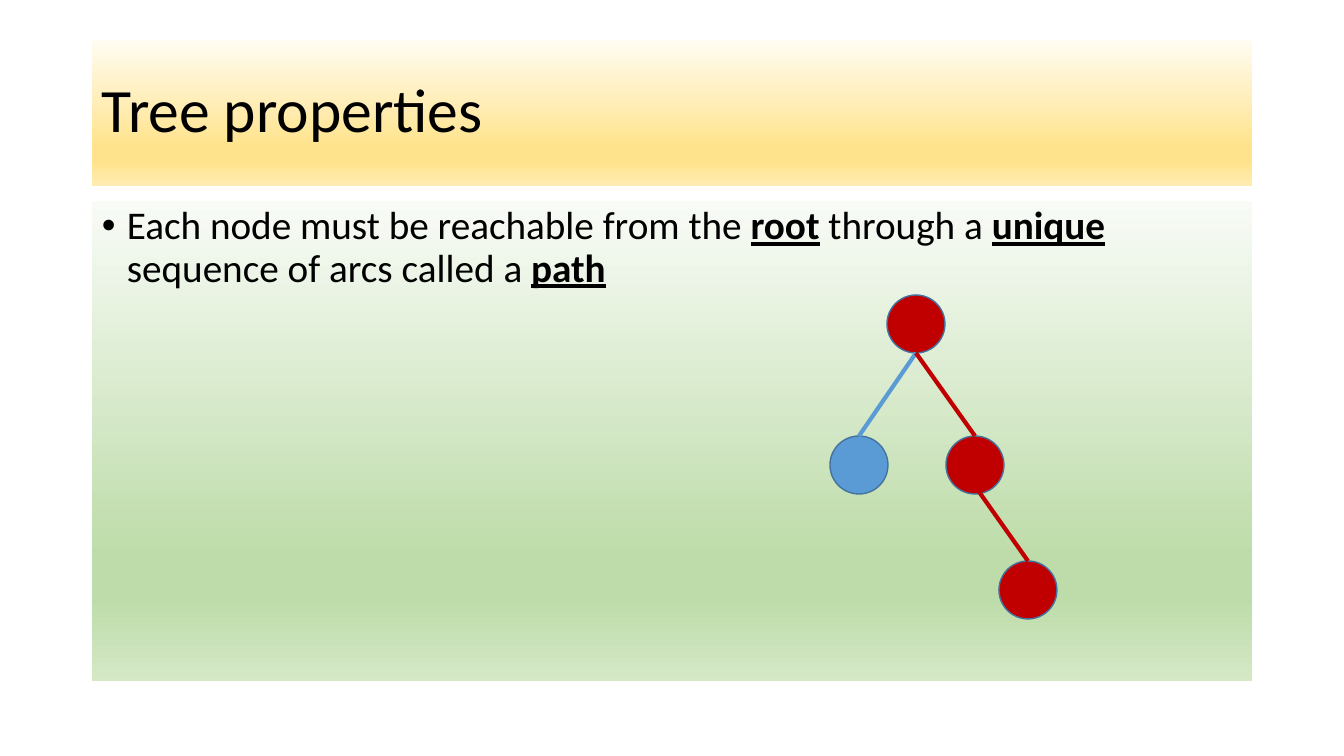
import pptx
import pptx.util
import pptx.dml.color
import pptx.enum.shapes
import pptx.enum.text
import pptx.oxml
import pptx.oxml.ns
import lxml.etree

RGB = pptx.dml.color.RGBColor
SHAPES = pptx.enum.shapes.MSO_SHAPE
ANCHOR = pptx.enum.text.MSO_ANCHOR
ALIGN = pptx.enum.text.PP_ALIGN
qn = pptx.oxml.ns.qn

BLACK = RGB(0x00, 0x00, 0x00)
RED = RGB(0xC0, 0x00, 0x00)
BLUE = RGB(0x5B, 0x9B, 0xD5)
OUTLINE = RGB(0x43, 0x73, 0x9E)
YELLOWS = [RGB(0xFF, 0xFC, 0xF2), RGB(0xFF, 0xE3, 0x8C),
           RGB(0xFF, 0xE3, 0x8C), RGB(0xFF, 0xEC, 0xB2)]
GREENS = [RGB(0xF8, 0xFB, 0xF6), RGB(0xBE, 0xDC, 0xAA),
          RGB(0xBE, 0xDC, 0xAA), RGB(0xD4, 0xE8, 0xC6)]
STOPS = [0, 74, 83, 100]  # percent

# Content: runs are (text, emphasised)
TITLE = [("Tree properties", False)]
STATEMENT = [
    ("Each node must be reachable from the ", False), ("root", True),
    (" through a ", False), ("unique", True),
    (" sequence of arcs called a ", False), ("path", True),
]
# Node: left, top, colour
NODES = {
    "root": (887, 295, RED),
    "left": (830, 436, BLUE),
    "right": (946, 436, RED),
    "leaf": (999, 561, RED),
}
# Arc: start point, child node, colour
ARCS = [
    ((916, 353), "left", BLUE),
    ((916, 353), "right", RED),
    ((970, 479), "leaf", RED),
]

# Layout in px
SLIDE_W, SLIDE_H = 1344, 756
PANEL_LEFT, PANEL_W = 92, 1160
TITLE_TOP, TITLE_H = 40, 146
BODY_TOP, BODY_H = 201, 480
NODE_SIZE = 58
BULLET_INDENT = 25


def px(length):
    return pptx.util.Emu(round(length * 12192000 / SLIDE_W))


def add_panel(top, height, colors, runs, size, anchor):
    panel = slide.shapes.add_shape(SHAPES.RECTANGLE, px(PANEL_LEFT), px(top),
                                   px(PANEL_W), px(height))
    panel.shadow.inherit = False
    panel.line.fill.background()

    # Vertical gradient with four stops
    panel.fill.gradient()
    panel.fill.gradient_angle = 270
    stop_list = next(panel.element.iter(qn("a:gsLst")))
    for stop in list(stop_list):
        stop_list.remove(stop)
    for percent, color in zip(STOPS, colors):
        stop = lxml.etree.SubElement(stop_list, qn("a:gs"), pos=str(percent * 1000))
        lxml.etree.SubElement(stop, qn("a:srgbClr"), val=str(color))

    frame = panel.text_frame
    frame.word_wrap = True
    frame.vertical_anchor = anchor
    paragraph = frame.paragraphs[0]
    paragraph.alignment = ALIGN.LEFT
    paragraph.line_spacing = 0.9
    for text, emphasised in runs:
        run = paragraph.add_run()
        run.text = text
        run.font.name = "Calibri"
        run.font.size = pptx.util.Pt(size)
        run.font.color.rgb = BLACK
        run.font.bold = run.font.underline = emphasised
    return paragraph


presentation = pptx.Presentation()
presentation.slide_width = px(SLIDE_W)
presentation.slide_height = px(SLIDE_H)
slide = presentation.slides.add_slide(presentation.slide_layouts[6])

# Title and bulleted statement
add_panel(TITLE_TOP, TITLE_H, YELLOWS, TITLE, 44, ANCHOR.MIDDLE)
statement = add_panel(BODY_TOP, BODY_H, GREENS, STATEMENT, 28, ANCHOR.TOP)
statement.space_before = pptx.util.Pt(10)
bullet_props = statement._p.get_or_add_pPr()
bullet_props.set("marL", str(px(BULLET_INDENT)))
bullet_props.set("indent", str(-px(BULLET_INDENT)))
lxml.etree.SubElement(bullet_props, qn("a:buFont"), typeface="Arial")
lxml.etree.SubElement(bullet_props, qn("a:buChar"), char="•")

# Tree nodes
circles = {}
for name, (left, top, color) in NODES.items():
    circle = slide.shapes.add_shape(SHAPES.OVAL, px(left), px(top),
                                    px(NODE_SIZE), px(NODE_SIZE))
    circle.shadow.inherit = False
    circle.fill.solid()
    circle.fill.fore_color.rgb = color
    circle.line.color.rgb = OUTLINE
    circle.line.width = pptx.util.Pt(1)
    circles[name] = circle

# Arcs, each ending at the top of its child
for (start_x, start_y), child, color in ARCS:
    left, top, _ = NODES[child]
    arc = slide.shapes.add_connector(
        pptx.enum.shapes.MSO_CONNECTOR.STRAIGHT, px(start_x), px(start_y),
        px(left + NODE_SIZE / 2), px(top))
    arc.end_connect(circles[child], 0)
    arc.line.color.rgb = color
    arc.line.width = pptx.util.Pt(3)
    lxml.etree.SubElement(arc.element.spPr, qn("a:effectLst"))

presentation.save("out.pptx")
